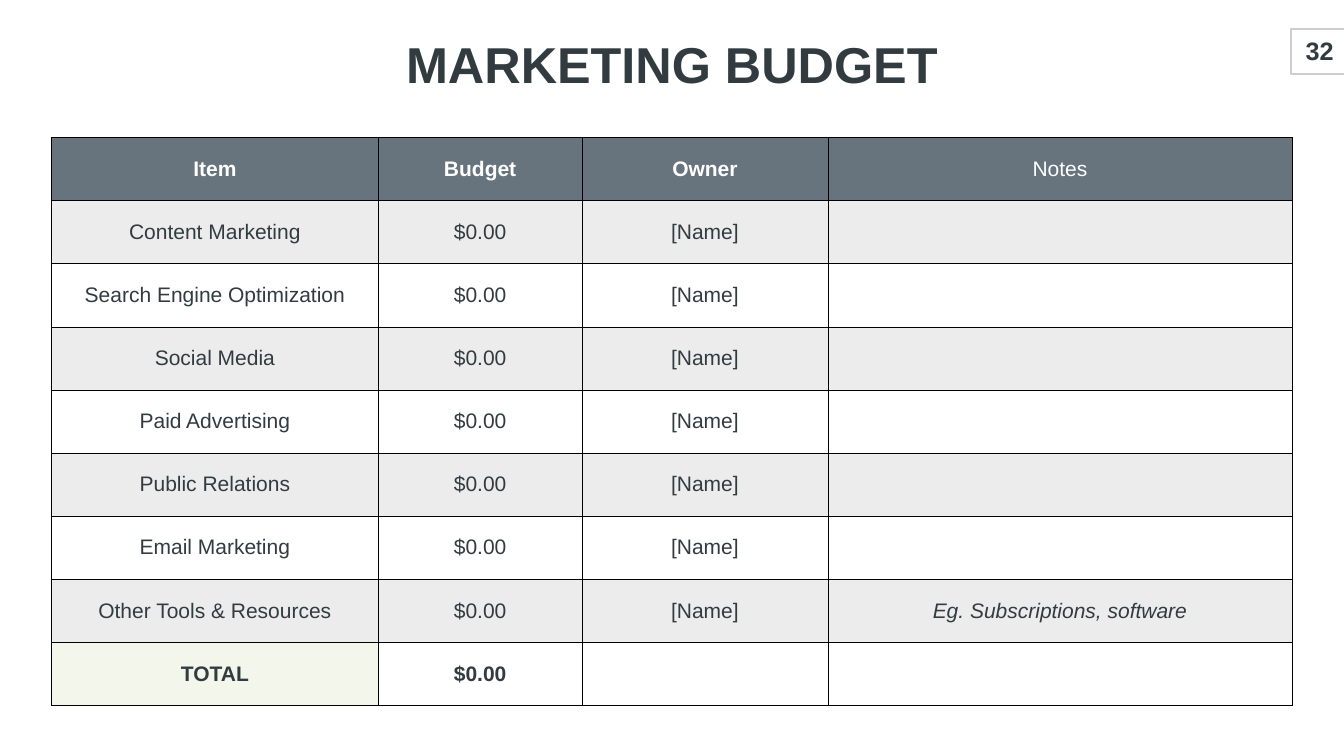
from lxml.etree import SubElement
from pptx import Presentation
from pptx.dml.color import RGBColor
from pptx.enum.shapes import MSO_SHAPE
from pptx.enum.text import MSO_ANCHOR, PP_ALIGN
from pptx.oxml.ns import qn
from pptx.util import Cm, Pt

HUES = {
    "ink": "323C40", "head": "67747D", "band": "ECECEC", "white": "FFFFFF",
    "total": "F3F6EB", "edge": "CDCDCD", "grid": "000000",
}
ITEMS = [
    "Content Marketing", "Search Engine Optimization", "Social Media",
    "Paid Advertising", "Public Relations", "Email Marketing",
    "Other Tools & Resources",
]
HEADS = ["Item", "Budget", "Owner", "Notes"]
WIDTHS = [16.48, 10.26, 12.4, 23.39]
ROW = 3.18


def color(name):
    """Return the named color."""
    return RGBColor.from_string(HUES[name])


def write(frame, text, size=30, hue="ink", bold=False, italic=False):
    """Put one centred line of formatted text in a frame."""
    para = frame.paragraphs[0]
    para.alignment = PP_ALIGN.CENTER
    run = para.add_run()
    run.text = text
    font = run.font
    font.name, font.size = "Arial", Pt(size)
    font.bold, font.italic = bold, italic
    font.color.rgb = color(hue)


def add_text(slide, box, text, inset=0, anchor=MSO_ANCHOR.MIDDLE, **form):
    """Add a text box with even insets."""
    frame = slide.shapes.add_textbox(*map(Cm, box)).text_frame
    frame.word_wrap = True
    frame.vertical_anchor = anchor
    frame.margin_left = frame.margin_right = Cm(inset)
    frame.margin_top = frame.margin_bottom = Cm(inset)
    write(frame, text, **form)


def add_badge(slide):
    """Add the framed page number."""
    box = slide.shapes.add_shape(
        MSO_SHAPE.RECTANGLE, Cm(65.05), Cm(1.45), Cm(2.92), Cm(2.26))
    box.shadow.inherit = False
    box.fill.background()
    box.line.color.rgb = color("edge")
    box.line.width = Pt(3)
    add_text(slide, (65.51, 1.63, 2.01, 1.83), "32", inset=0.15,
             anchor=MSO_ANCHOR.BOTTOM, size=36, bold=True)


def add_edges(cell):
    """Draw a thin line on all four sides of a cell."""
    props = cell._tc.get_or_add_tcPr()
    for side in ("lnL", "lnR", "lnT", "lnB"):
        line = SubElement(props, qn(f"a:{side}"), w=str(Pt(0.75)))
        fill = SubElement(line, qn("a:solidFill"))
        SubElement(fill, qn("a:srgbClr"), val=HUES["grid"])


def fill_cell(cell, text, back, **form):
    """Set the edges, fill and text of a cell."""
    add_edges(cell)
    cell.fill.solid()
    cell.fill.fore_color.rgb = color(back)
    cell.vertical_anchor = MSO_ANCHOR.MIDDLE
    cell.margin_left = cell.margin_right = Cm(0.13)
    cell.margin_top = cell.margin_bottom = Cm(0.13)
    if text:
        write(cell.text_frame, text, **form)


def add_budget(slide):
    """Add the budget table with its header and total rows."""
    rows = [[item, "$0.00", "[Name]", ""] for item in ITEMS]
    rows[-1][-1] = "Eg. Subscriptions, software"
    rows = [HEADS, *rows, ["TOTAL", "$0.00", "", ""]]
    last = len(rows) - 1
    table = slide.shapes.add_table(
        len(rows), len(HEADS), Cm(2.59), Cm(6.93),
        Cm(sum(WIDTHS)), Cm(ROW * len(rows))).table
    table.first_row = table.horz_banding = False
    for col, width in zip(table.columns, WIDTHS):
        col.width = Cm(width)
    for r, texts in enumerate(rows):
        table.rows[r].height = Cm(ROW)
        for c, text in enumerate(texts):
            back, form = ("band" if r % 2 else "white"), {}
            if r == 0:
                back = "head"
                form = {"hue": "white", "bold": c < 3}
            elif r == last:
                back = "white" if c else "total"
                form = {"bold": True}
            elif c == 3:
                form = {"italic": True}
            fill_cell(table.cell(r, c), text, back, **form)


def main():
    """Build and save the slide."""
    deck = Presentation()
    deck.slide_width, deck.slide_height = Cm(67.74), Cm(38.1)
    slide = deck.slides.add_slide(deck.slide_layouts[6])
    add_badge(slide)
    add_text(slide, (13.87, 1.63, 40, 3.1), "MARKETING BUDGET",
             size=72, bold=True)
    add_budget(slide)
    deck.save("out.pptx")


if __name__ == "__main__":
    main()
